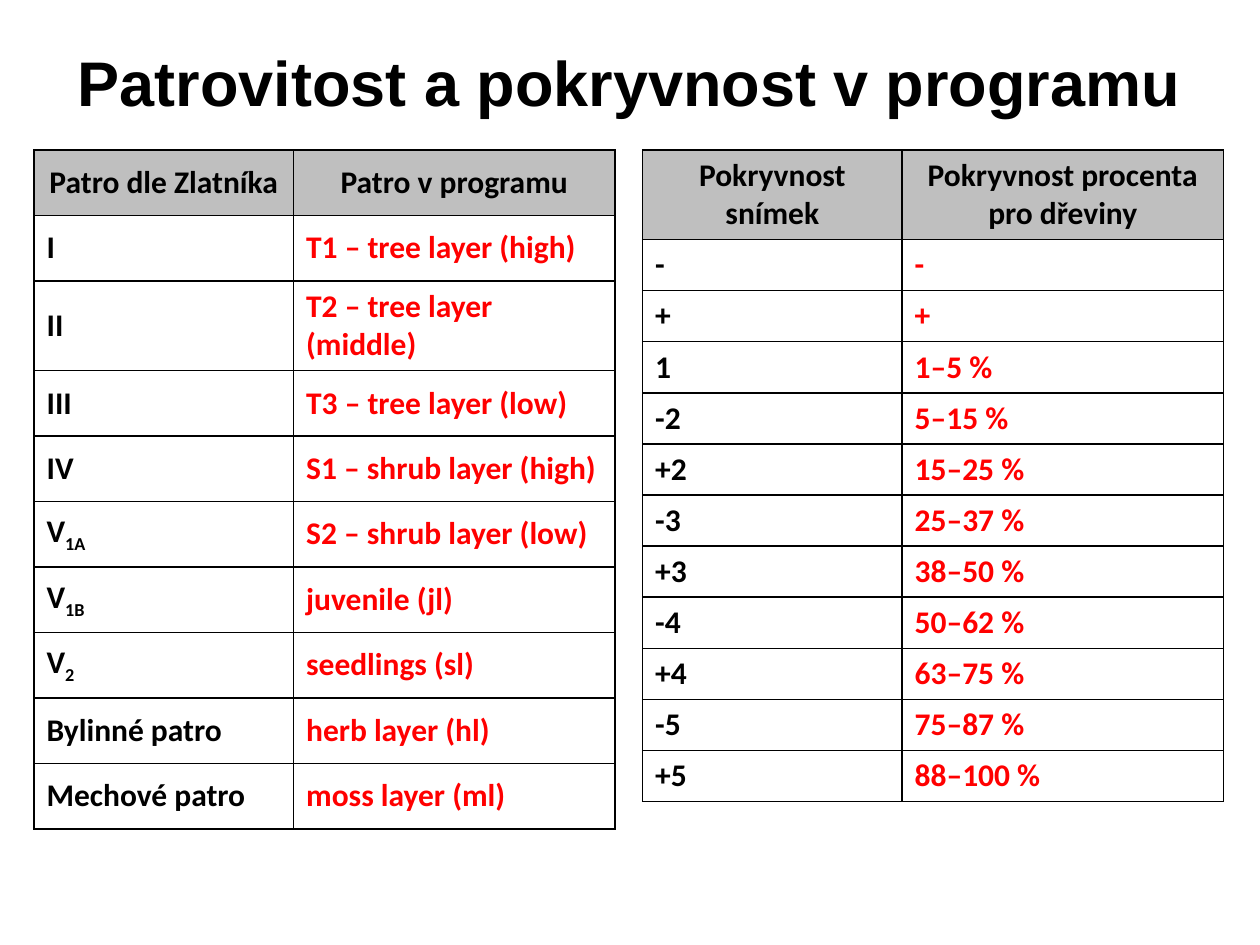
from dataclasses import dataclass

from lxml import etree
from pptx import Presentation
from pptx.dml.color import RGBColor
from pptx.enum.text import MSO_ANCHOR, PP_ALIGN
from pptx.oxml.ns import qn
from pptx.util import Inches, Pt

CENTER, LEFT = PP_ALIGN.CENTER, PP_ALIGN.LEFT
MIDDLE, BOTTOM = MSO_ANCHOR.MIDDLE, MSO_ANCHOR.BOTTOM

COLORS = {"text": "000000", "value": "FF0000", "header": "BFBFBF", "border": "000000"}
COLUMN_WIDTHS = (2.06, 2.55)
TABLE_TOP = 1.19
TITLE_ONLY = 5


@dataclass(frozen=True)
class LookupTable:
    left: float
    header_height: float
    row_height: float
    header: tuple[str, str]
    rows: tuple[tuple[str, str], ...]


# An underscore in a label starts its subscript.
LAYERS = LookupTable(
    0.27, 0.52, 0.52,
    ("Patro dle Zlatníka", "Patro v programu"),
    (
        ("I", "T1 – tree layer (high)"),
        ("II", "T2 – tree layer (middle)"),
        ("III", "T3 – tree layer (low)"),
        ("IV", "S1 – shrub layer (high)"),
        ("V_1A", "S2 – shrub layer (low)"),
        ("V_1B", "juvenile (jl)"),
        ("V_2", "seedlings (sl)"),
        ("Bylinné patro", "herb layer (hl)"),
        ("Mechové patro", "moss layer (ml)"),
    ),
)
COVER = LookupTable(
    5.1, 0.49, 0.36,
    ("Pokryvnost snímek", "Pokryvnost procenta pro dřeviny"),
    (
        ("-", "-"),
        ("+", "+"),
        ("1", "1–5 %"),
        ("-2", "5–15 %"),
        ("+2", "15–25 %"),
        ("-3", "25–37 %"),
        ("+3", "38–50 %"),
        ("-4", "50–62 %"),
        ("+4", "63–75 %"),
        ("-5", "75–87 %"),
        ("+5", "88–100 %"),
    ),
)


def write(frame, text: str, *, size: int = 18, font: str = "Calibri",
          color: str = "text", align=LEFT, line_spacing: float = 1.0) -> None:
    """Write bold text; whatever follows an underscore becomes a subscript."""
    para = frame.paragraphs[0]
    para.alignment = align
    para.line_spacing = line_spacing
    for index, part in enumerate(text.split("_")):
        span = para.add_run()
        span.text = part
        span.font.name = font
        span.font.size = Pt(size)
        span.font.bold = True
        span.font.color.rgb = RGBColor.from_string(COLORS[color])
        if index:
            span.font._element.set("baseline", "-25000")


def add_borders(cell) -> None:
    properties = cell._tc.get_or_add_tcPr()
    for position, side in enumerate(("lnL", "lnR", "lnT", "lnB")):
        line = etree.Element(qn(f"a:{side}"), w=str(Pt(1)))
        fill = etree.SubElement(line, qn("a:solidFill"))
        etree.SubElement(fill, qn("a:srgbClr"), val=COLORS["border"])
        properties.insert(position, line)


def add_lookup_table(slide, data: LookupTable) -> None:
    lines = (data.header, *data.rows)
    height = data.header_height + data.row_height * len(data.rows)
    table = slide.shapes.add_table(
        len(lines), len(COLUMN_WIDTHS), Inches(data.left), Inches(TABLE_TOP),
        Inches(sum(COLUMN_WIDTHS)), Inches(height)).table
    table.first_row = table.horz_banding = False
    for column, width in zip(table.columns, COLUMN_WIDTHS):
        column.width = Inches(width)

    for row_index, texts in enumerate(lines):
        is_header = row_index == 0
        table.rows[row_index].height = Inches(
            data.header_height if is_header else data.row_height)
        for column_index, text in enumerate(texts):
            cell = table.cell(row_index, column_index)
            cell.vertical_anchor = MIDDLE
            if is_header:
                cell.fill.solid()
                cell.fill.fore_color.rgb = RGBColor.from_string(COLORS["header"])
                write(cell.text_frame, text, align=CENTER)
            else:
                cell.fill.background()
                write(cell.text_frame, text,
                      color="value" if column_index else "text")
            add_borders(cell)


def add_title(slide, text: str) -> None:
    title = slide.shapes.title
    title.left, title.top = Inches(0.27), Inches(0.21)
    title.width, title.height = Inches(9.45), Inches(0.79)
    title.text_frame.vertical_anchor = BOTTOM
    write(title.text_frame, text, size=36, font="Arial", align=CENTER,
          line_spacing=0.9)


def main() -> None:
    deck = Presentation()
    deck.slide_width, deck.slide_height = Inches(10), Inches(7.5)
    slide = deck.slides.add_slide(deck.slide_layouts[TITLE_ONLY])
    add_title(slide, "Patrovitost a pokryvnost v programu")
    for data in (LAYERS, COVER):
        add_lookup_table(slide, data)
    deck.save("out.pptx")


if __name__ == "__main__":
    main()
